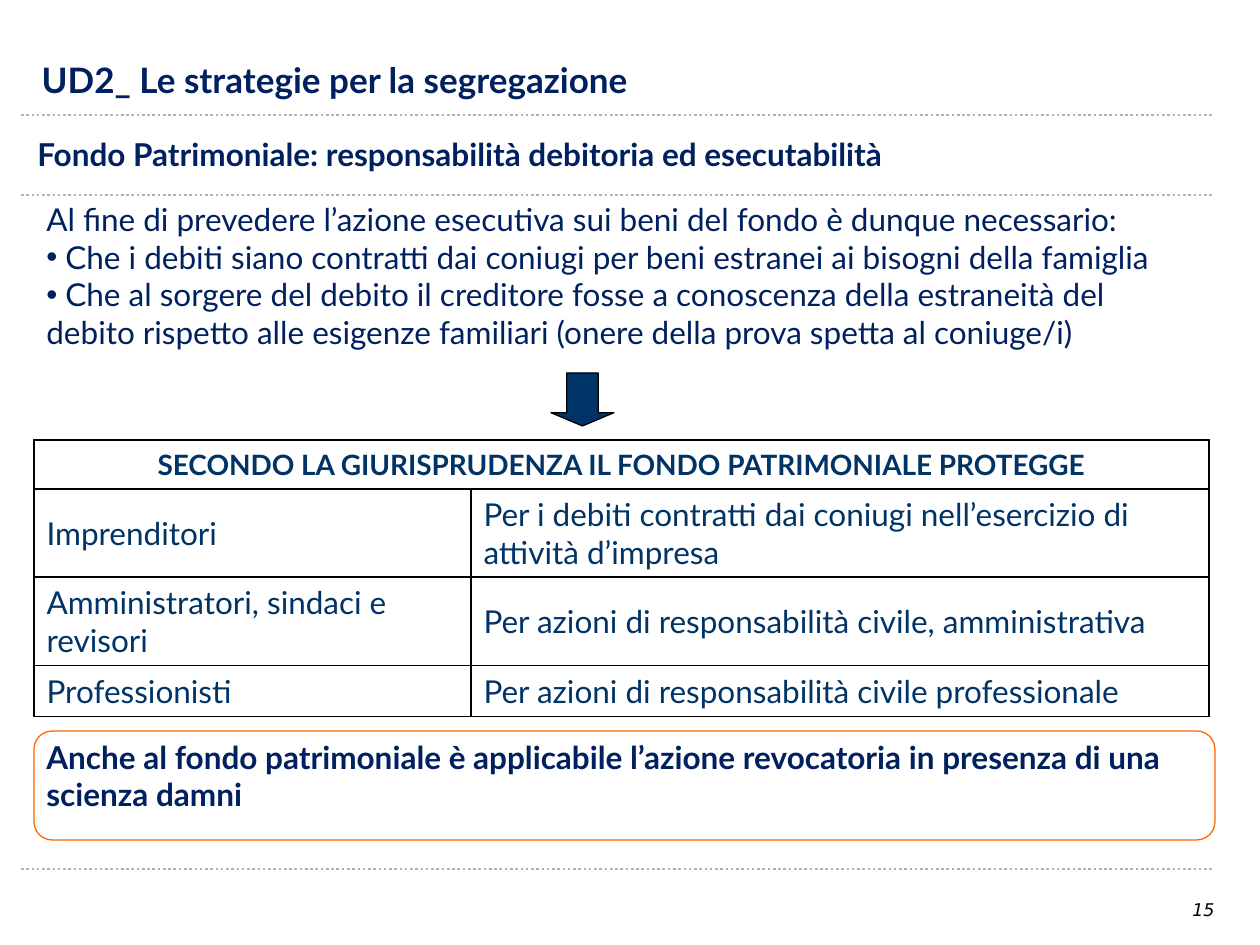
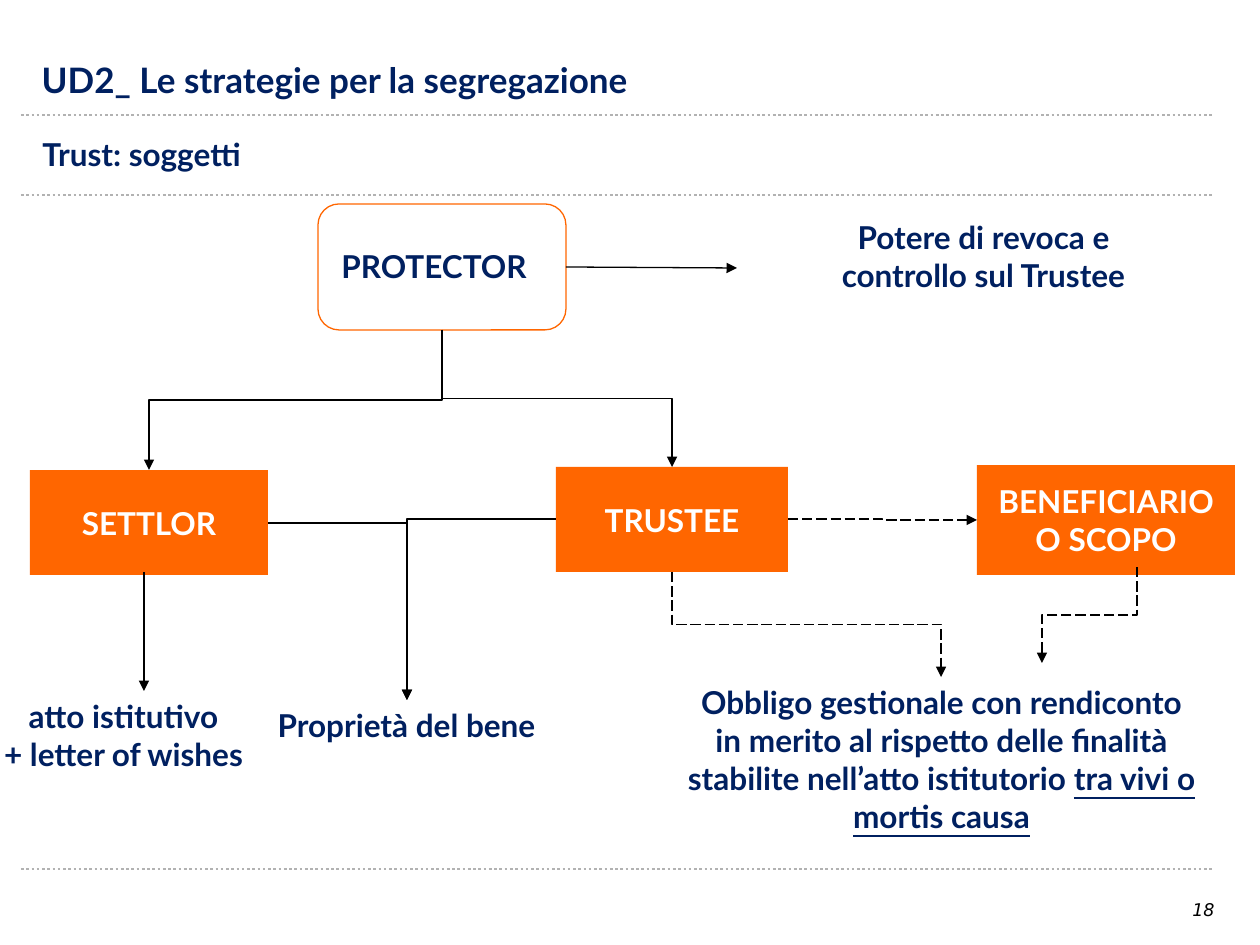
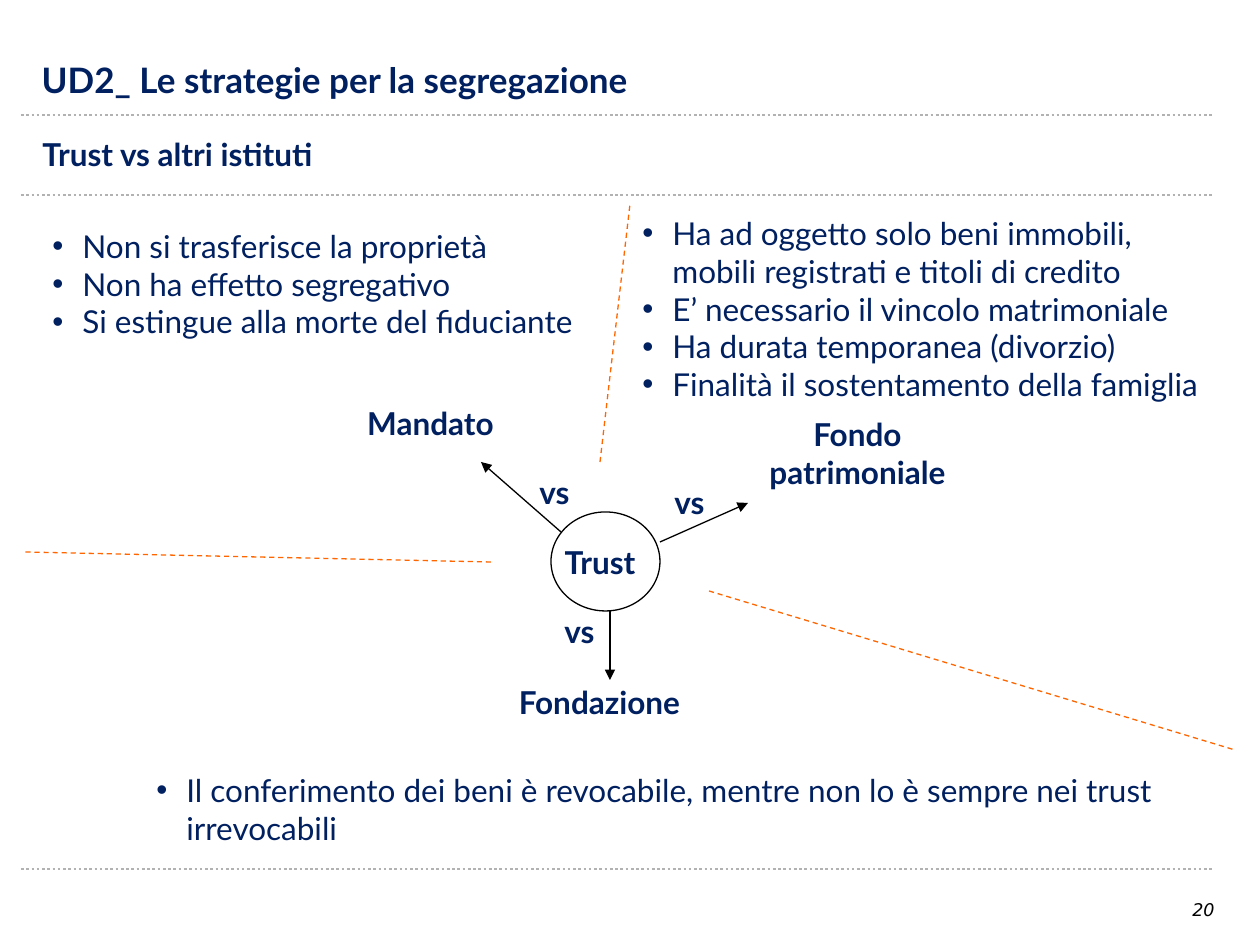
"""Build three slides on asset segregation: family fund, trust parties and comparisons."""
from dataclasses import dataclass

from lxml.etree import SubElement
from pptx import Presentation
from pptx.dml.color import RGBColor
from pptx.enum.dml import MSO_LINE as Dash
from pptx.enum.shapes import MSO_CONNECTOR as Connector, MSO_SHAPE as Shape
from pptx.enum.text import MSO_ANCHOR as Anchor, PP_ALIGN as Align
from pptx.oxml.ns import qn
from pptx.util import Emu, Pt


@dataclass(frozen=True)
class Theme:
    font: str = "Lato"
    number_font: str = "DejaVu Sans"
    navy: str = "002060"
    blue: str = "003366"
    orange: str = "FF6600"
    grey: str = "B2B2B2"
    black: str = "000000"
    white: str = "FFFFFF"
    title_size: int = 20
    body_size: int = 18
    header_size: int = 16
    number_size: int = 10
    thin: float = 0.75
    rule: float = 1.5


THEME = Theme()
EMU_PER_PX = 914400 / 126
SLIDE_SIZE = (1260, 945)
TITLE = "UD2_ Le strategie per la segregazione"
TITLE_BOX = (29, 52, 701, 55)
NUMBER_BOX = (1174, 893, 59, 45)
RULE_LEFT, RULE_RIGHT, RULE_TOPS = 21, 1212, (115, 195, 869)
BULLET_INDENT = 30

FUND_SUBTITLE = "Fondo Patrimoniale: responsabilità debitoria ed esecutabilità"
FUND_CONDITIONS = [
    "Al fine di prevedere l’azione esecutiva sui beni del fondo è dunque necessario:",
    " Che i debiti siano contratti dai coniugi per beni estranei ai bisogni della famiglia",
    " Che al sorgere del debito il creditore fosse a conoscenza della estraneità del debito "
    "rispetto alle esigenze familiari (onere della prova spetta al coniuge/i)",
]
FUND_HEADER = "SECONDO LA GIURISPRUDENZA IL FONDO PATRIMONIALE PROTEGGE"
FUND_ROWS = [
    ("Imprenditori", "Per i debiti contratti dai coniugi nell’esercizio di attività d’impresa"),
    ("Amministratori, sindaci e revisori", "Per azioni di responsabilità civile, amministrativa"),
    ("Professionisti", "Per azioni di responsabilità civile professionale"),
]
FUND_TABLE_BOX = (34, 440, 1175, 276)
FUND_COLUMNS, FUND_HEIGHTS = (437, 738), (49, 88, 88, 51)
FUND_WARNING = (
    "Anche al fondo patrimoniale è applicabile l’azione revocatoria in presenza di una scienza damni"
)

TRUST_PARTIES = [
    (["SETTLOR"], (30, 470, 238, 105)),
    (["TRUSTEE"], (556, 467, 232, 105)),
    (["BENEFICIARIO", "O SCOPO"], (977, 465, 258, 110)),
]
TRUST_LABELS = [
    (["PROTECTOR"], (292, 241, 284, 50)),
    (["Potere di revoca e controllo sul Trustee"], (810, 212, 347, 127)),
    (["atto istitutivo", "+ letter of wishes"], (-15, 691, 277, 127)),
    (["Proprietà del bene"], (139, 700, 535, 50)),
    ([("Obbligo gestionale con rendiconto in merito al rispetto delle finalità stabilite "
       "nell’atto istitutorio ", "tra vivi o mortis causa")], (674, 677, 535, 204)),
]
TRUST_ARROWS = [
    ("straight", (566, 267), (737, 268), None),
    ("straight", (144, 572), (144, 691), None),
    ("down", (442, 330), (149, 470), None),
    ("down", (442, 330), (672, 467), None),
    ("corner", (268, 523), (407, 700), None),
    ("corner", (556, 519), (407, 700), None),
    ("across", (788, 519), (977, 520), Dash.LONG_DASH),
    ("down", (672, 572), (941, 677), Dash.LONG_DASH),
    ("down", (1137, 567), (1042, 663), Dash.LONG_DASH),
]

COMPARISON_LISTS = [
    (["Non si trasferisce la proprietà", "Non ha effetto segregativo",
      "Si estingue alla morte del fiduciante"], (40, 204, 610, 159)),
    (["Ha ad oggetto solo beni immobili, mobili registrati e titoli di credito",
      "E’ necessario il vincolo matrimoniale", "Ha durata temporanea (divorzio)",
      "Finalità il sostentamento della famiglia"], (630, 244, 605, 129)),
    (["Il conferimento dei beni è revocabile, mentre non lo è sempre nei trust irrevocabili"],
     (144, 731, 1062, 155)),
]
COMPARISON_LABELS = [
    ("Mandato", (292, 383, 277, 79)),
    ("Fondo patrimoniale", (719, 413, 277, 79)),
    ("Fondazione", (461, 662, 277, 79)),
    ("Trust", (541, 522, 118, 79)),
    ("vs", (520, 452, 69, 79)),
    ("vs", (650, 462, 79, 79)),
    ("vs", (441, 591, 277, 79)),
]
COMPARISON_ARROWS = [((561, 532), (481, 462)), ((660, 542), (748, 503)), ((610, 611), (610, 680))]
COMPARISON_BORDERS = [((491, 562), (25, 552)), ((600, 462), (630, 204)), ((709, 591), (1235, 750))]


def px(length):
    return Emu(round(length * EMU_PER_PX))


def rgb(color):
    return RGBColor.from_string(color)


def write(frame, paragraphs, *, size=THEME.body_size, color=THEME.navy, font=THEME.font, bold=False,
          italic=False, align=Align.LEFT, anchor=Anchor.TOP, indent=None, bullets_from=0):
    frame.word_wrap = True
    frame.vertical_anchor = anchor
    for index, content in enumerate(paragraphs):
        paragraph = frame.add_paragraph() if index else frame.paragraphs[0]
        paragraph.alignment = align
        if indent is not None and index >= bullets_from:
            properties = paragraph._p.get_or_add_pPr()
            properties.set("marL", str(px(indent)))
            properties.set("indent", str(-px(indent)))
            SubElement(properties, qn("a:buFont"), typeface="Arial")
            SubElement(properties, qn("a:buChar"), char="•")
        runs = (content,) if isinstance(content, str) else content
        for position, text in enumerate(runs):
            run = paragraph.add_run()
            run.text = text
            run.font.size, run.font.name = Pt(size), font
            run.font.bold, run.font.italic = bold, italic
            run.font.underline = True if position else None
            run.font.color.rgb = rgb(color)


def add_text(slide, box, paragraphs, **style):
    write(slide.shapes.add_textbox(*map(px, box)).text_frame, paragraphs, **style)


def add_label(slide, box, paragraphs, **style):
    add_text(slide, box, paragraphs, bold=True, align=Align.CENTER, **style)


def add_box(slide, kind, box, fill=None, line=None):
    shape = slide.shapes.add_shape(kind, *map(px, box))
    shape.shadow.inherit = False
    if fill:
        shape.fill.solid()
        shape.fill.fore_color.rgb = rgb(fill)
    else:
        shape.fill.background()
    if line:
        shape.line.color.rgb, shape.line.width = rgb(line), Pt(THEME.thin)
    else:
        shape.line.fill.background()
    return shape


def add_line(slide, start, end, *, route="straight", color=THEME.black, width=THEME.thin,
             dash=None, arrow=False):
    rotation = 0
    if route == "down":
        center_x, center_y = (start[0] + end[0]) / 2, (start[1] + end[1]) / 2
        half_width, half_height = (end[1] - start[1]) / 2, abs(end[0] - start[0]) / 2
        side = 1 if end[0] < start[0] else -1
        rotation = 90 if side == 1 else 270
        start = (center_x - side * half_width, center_y - half_height)
        end = (center_x + side * half_width, center_y + half_height)
    kind = Connector.STRAIGHT if route == "straight" else Connector.ELBOW
    connector = slide.shapes.add_connector(kind, *map(px, (*start, *end)))
    properties = connector._element.spPr
    if rotation:
        properties.find(qn("a:xfrm")).set("rot", str(rotation * 60000))
    if route == "corner":
        properties.find(qn("a:prstGeom")).set("prst", "bentConnector2")
    connector.line.color.rgb, connector.line.width = rgb(color), Pt(width)
    if dash:
        connector.line.dash_style = dash
    if arrow:
        SubElement(properties.find(qn("a:ln")), qn("a:tailEnd"), type="triangle")
    SubElement(properties, qn("a:effectLst"))


def add_base_slide(presentation, number, subtitle, subtitle_left):
    slide = presentation.slides.add_slide(presentation.slide_layouts[5])
    title = slide.shapes.title
    title.left, title.top, title.width, title.height = map(px, TITLE_BOX)
    write(title.text_frame, [TITLE], size=THEME.title_size, bold=True)
    for top in RULE_TOPS:
        add_line(slide, (RULE_LEFT, top), (RULE_RIGHT, top), color=THEME.grey, width=THEME.rule,
                 dash=Dash.ROUND_DOT)
    add_text(slide, (subtitle_left, 129, 998, 50), [subtitle], bold=True)
    add_text(slide, NUMBER_BOX, [str(number)], size=THEME.number_size, font=THEME.number_font,
             color=THEME.black, italic=True, align=Align.CENTER)
    return slide


def format_cell(cell):
    properties = cell._tc.get_or_add_tcPr()
    for edge in ("lnL", "lnR", "lnT", "lnB"):
        border = SubElement(properties, qn(f"a:{edge}"), w=str(Pt(1)))
        SubElement(SubElement(border, qn("a:solidFill")), qn("a:srgbClr"), val=THEME.black)
    cell.fill.background()
    cell.vertical_anchor = Anchor.MIDDLE


def add_fund_table(slide):
    rows = [(FUND_HEADER, ""), *FUND_ROWS]
    table = slide.shapes.add_table(len(rows), len(FUND_COLUMNS), *map(px, FUND_TABLE_BOX)).table
    table.first_row = table.horz_banding = False
    for column, width in zip(table.columns, FUND_COLUMNS):
        column.width = px(width)
    for row, height in zip(table.rows, FUND_HEIGHTS):
        row.height = px(height)
    table.cell(0, 0).merge(table.cell(0, 1))
    header_style = {"size": THEME.header_size, "bold": True, "align": Align.CENTER}
    for row_index, texts in enumerate(rows):
        for column_index, text in enumerate(texts):
            cell = table.cell(row_index, column_index)
            format_cell(cell)
            if text:
                write(cell.text_frame, [text], color=THEME.blue, anchor=Anchor.MIDDLE,
                      **({} if row_index else header_style))


def build_fund_slide(presentation):
    slide = add_base_slide(presentation, 15, FUND_SUBTITLE, 25)
    add_text(slide, (34, 186, 1177, 179), FUND_CONDITIONS, anchor=Anchor.MIDDLE, indent=0,
             bullets_from=1)
    add_fund_table(slide)
    arrow = add_box(slide, Shape.DOWN_ARROW, (551, 373, 63, 53), THEME.blue, THEME.black)
    arrow.adjustments[1] = 0.25
    add_text(slide, (34, 731, 1181, 89), [FUND_WARNING], bold=True, anchor=Anchor.MIDDLE)
    add_box(slide, Shape.ROUNDED_RECTANGLE, (34, 731, 1181, 109), line=THEME.orange)


def build_trust_slide(presentation):
    slide = add_base_slide(presentation, 18, "Trust: soggetti", 30)
    for names, box in TRUST_PARTIES:
        party = add_box(slide, Shape.RECTANGLE, box, fill=THEME.orange)
        write(party.text_frame, names, color=THEME.white, bold=True, align=Align.CENTER,
              anchor=Anchor.MIDDLE)
    add_box(slide, Shape.ROUNDED_RECTANGLE, (318, 204, 248, 126), line=THEME.orange)
    for paragraphs, box in TRUST_LABELS:
        add_label(slide, box, paragraphs)
    for route, start, end, dash in TRUST_ARROWS:
        add_line(slide, start, end, route=route, dash=dash, arrow=True)


def build_comparison_slide(presentation):
    slide = add_base_slide(presentation, 20, "Trust vs altri istituti", 30)
    for items, box in COMPARISON_LISTS:
        add_text(slide, box, items, anchor=Anchor.MIDDLE, indent=BULLET_INDENT)
    for start, end in COMPARISON_BORDERS:
        add_line(slide, start, end, color=THEME.orange, dash=Dash.DASH)
    for text, box in COMPARISON_LABELS:
        add_label(slide, box, [text], anchor=Anchor.MIDDLE)
    for start, end in COMPARISON_ARROWS:
        add_line(slide, start, end, arrow=True)
    add_box(slide, Shape.OVAL, (551, 512, 109, 99), line=THEME.black)


def main():
    presentation = Presentation()
    presentation.slide_width, presentation.slide_height = map(px, SLIDE_SIZE)
    build_fund_slide(presentation)
    build_trust_slide(presentation)
    build_comparison_slide(presentation)
    presentation.save("out.pptx")


if __name__ == "__main__":
    main()
